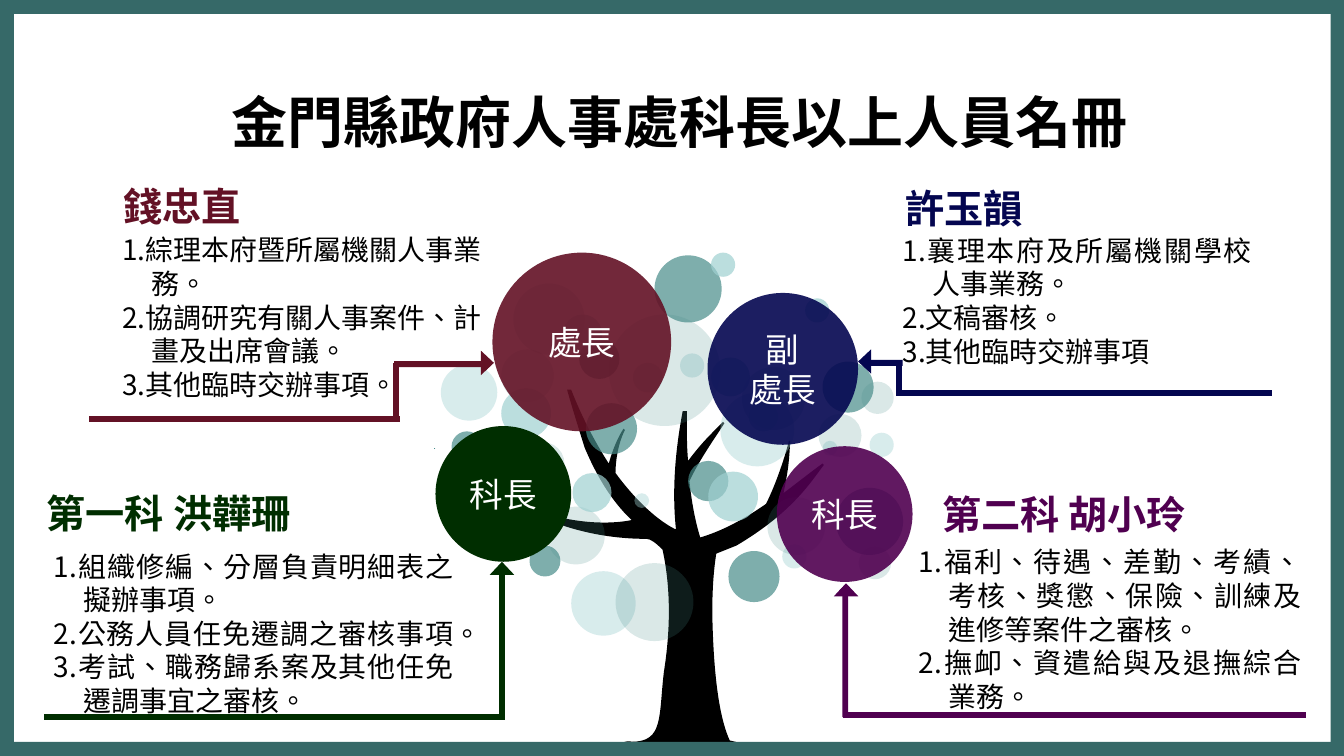
from dataclasses import dataclass
from typing import Optional

from lxml import etree
from pptx import Presentation
from pptx.dml.color import RGBColor
from pptx.enum import shapes, text
from pptx.oxml.ns import qn
from pptx.util import Inches, Pt

COLUMNS, ROWS = 100, 56.25
CELL = Inches(0.1)
FONT = "Noto Sans CJK SC"
BLACK = RGBColor(0x00, 0x00, 0x00)
WHITE = RGBColor(0xFF, 0xFF, 0xFF)
FRAME = RGBColor(0x36, 0x69, 0x68)
TEAL = RGBColor(0x48, 0x8C, 0x8A)
AQUA = RGBColor(0x9F, 0xD0, 0xD1)
WINE = RGBColor(0x63, 0x11, 0x25)
NAVY = RGBColor(0x04, 0x06, 0x50)
GREEN = RGBColor(0x00, 0x2E, 0x00)
PURPLE = RGBColor(0x50, 0x00, 0x50)
KIND = shapes.MSO_SHAPE


@dataclass(frozen=True)
class Box:
    left: float
    top: float
    width: float
    height: float

    def lengths(self) -> list[int]:
        return [cells(n) for n in (self.left, self.top, self.width, self.height)]


@dataclass(frozen=True)
class Foliage:
    color: RGBColor
    opacity: int
    spots: tuple


@dataclass(frozen=True)
class Role:
    lines: tuple
    box: Box
    color: RGBColor
    opacity: int


@dataclass(frozen=True)
class Member:
    name: str
    name_box: Box
    color: RGBColor
    duties: tuple
    duty_box: Box
    margin: float = 2.2


@dataclass(frozen=True)
class Piece:
    kind: int
    box: Box
    color: RGBColor
    rotation: int = 0


TREE_START = (49.3, 40.9)
TREE_STEPS = (
    (49.8, 43.2, 50, 46.2, 49.4, 50), (49, 53.3, 49.4, 55.2, 47, 55.2),
    (47, 55.2, 46.5, 55, 45.8, 55.6), (55.9, 55.6),
    (55.4, 55.4, 54.8, 55.2, 54.3, 55.1), (53.7, 53.8, 53.1, 51.2, 53, 45.6),
    (53, 43.9, 53.1, 42.4, 53.3, 41.2), (54.8, 40.6),
    (59, 38.1, 60.3, 35.9, 61.3, 34.6), (61.2, 34.5),
    (60.1, 35.3, 59.1, 36.1, 58.3, 36.7), (58.6, 35.2, 58.7, 34.7, 58.8, 32.8),
    (58.7, 32.8), (58.5, 33.7, 57.8, 35.9, 57, 37.5),
    (54.7, 39.1, 53.1, 39.7, 52.1, 40), (51.8, 39, 51.5, 37.7, 51.3, 35.8),
    (52.1, 34.1, 53.4, 32.3, 53.9, 31.5), (53.8, 31.4),
    (52.5, 32.7, 52.1, 33.1, 51.2, 34.3), (51.1, 33.3, 51.1, 32, 51.1, 30.6),
    (50.8, 30.6), (50.5, 32.2, 49.9, 35.7, 50.3, 39.4),
    (50.3, 39.4, 48.3, 38.6, 45.8, 35.2), (45.8, 34.6, 45.9, 33.2, 46.5, 32),
    (46.4, 31.9), (46, 32.5, 45.6, 33.4, 45.3, 34.5),
    (44.4, 33.1, 43.4, 31.3, 42.5, 29), (42.2, 29),
    (42.4, 29.8, 43.5, 33.3, 43.5, 33.3), (44.3, 35.2, 45.4, 37.2, 47, 38.7),
    (47, 38.7, 44.2, 39.4, 40.2, 38.1), (40.1, 38.4),
    (41.8, 39.2, 44.6, 40.1, 48.1, 40.1), (48.4, 40.1, 48.8, 40.4, 49.3, 40.9),
)

FOLIAGE = (
    Foliage(TEAL, 70, (
        (33.6, 32.1, 2.3), (39.4, 40.6, 2.3), (43.1, 25.2, 3), (51.2, 34.3, 3),
        (43.6, 30, 3.8), (54.2, 41, 3.8), (61.2, 26.9, 3.8), (62.2, 36.3, 5),
        (48.7, 19, 5))),
    Foliage(AQUA, 40, (
        (32.8, 27.1, 4.2), (53.6, 29.2, 5.5), (42.5, 42.5, 4.8), (58.2, 40.5, 1.8),
        (64.7, 32.2, 1.8), (37.2, 33.4, 1.8), (50.6, 26.3, 1.8), (38.2, 21.1, 5.3),
        (47.2, 36.7, 1.1), (61.2, 32.8, 1.1))),
    Foliage(TEAL, 20, (
        (45.3, 23.4, 8.3), (55.2, 27.3, 4.7), (40.7, 37.7, 4.3), (57.1, 37, 4.3),
        (37.3, 26, 3.9), (38.8, 32.9, 3.2), (60.9, 30.8, 3.2), (64.1, 28.4, 2.4),
        (63.9, 40.7, 2.4), (45.8, 41.9, 5.8))),
    Foliage(AQUA, 70, (
        (59.9, 22.2, 1.8), (52.9, 18.8, 1.8), (55.7, 29.9, 2.2), (47.1, 27, 2.2),
        (52.9, 26.6, 2.9), (41.9, 23.4, 2.9), (42.6, 35.2, 2.9), (37.3, 28.9, 3.7),
        (52.7, 35.1, 3.7))),
)

ROLES = (
    Role(("處長",), Box(36.64, 18.8, 13.3, 13.3), WINE, 90),
    Role(("副", "處長"), Box(52.64, 21.8, 11.2, 11.3), NAVY, 90),
    Role(("科長",), Box(32.4, 31.7, 10.1, 10.1), GREEN, 100),
    Role(("科長",), Box(57.8, 33.2, 10.1, 10.1), PURPLE, 90),
)

LEFT_MEMBERS = (
    Member("錢忠直", Box(9.2, 13.6, 11.4, 3.9), WINE,
           ("1.綜理本府暨所屬機關人事業務。", "2.協調研究有關人事案件、計畫及出席會議。",
            "3.其他臨時交辦事項。"), Box(9.1, 17.34, 26.74, 12.6)),
    Member("第一科 洪韡珊", Box(3.46, 36.4, 31.8, 5.8), GREEN,
           ("1.組織修編、分層負責明細表之擬辦事項。", "2.公務人員任免遷調之審核事項。",
            "3.考試、職務歸系案及其他任免遷調事宜之審核。"), Box(4, 40.86, 29.8, 11.4)),
)
RIGHT_MEMBERS = (
    Member("許玉韻", Box(67.36, 13.7, 21.1, 5.7), NAVY,
           ("1.襄理本府及所屬機關學校人事業務。", "2.文稿審核。", "3.其他臨時交辦事項"),
           Box(66.46, 17.36, 26.7, 12.7), 2.9),
    Member("第二科 胡小玲", Box(70.1, 36.5, 26.7, 5.7), PURPLE,
           ("1.福利、待遇、差勤、考績、考核、獎懲、保險、訓練及進修等案件之審核。",
            "2.撫卹、資遣給與及退撫綜合業務。"), Box(68.36, 40.54, 28.5, 12.1)),
)

BORDERS = (Box(0, 0, COLUMNS, 1.04), Box(0, 0, 1.04, ROWS),
           Box(0, ROWS - 1.04, COLUMNS - 0.8, 1.04), Box(COLUMNS - 1, 0, 1, ROWS))

POINTERS = (
    Piece(KIND.RECTANGLE, Box(6.7, 31.06, 23, 0.3), WINE),
    Piece(KIND.RECTANGLE, Box(27.44, 29, 4.1, 0.3), WINE, 270),
    Piece(KIND.RECTANGLE, Box(3.36, 53.2, 34, 0.3), GREEN),
    Piece(KIND.RECTANGLE, Box(62.8, 53.06, 34.3, 0.3), PURPLE),
    Piece(KIND.RECTANGLE, Box(66.76, 29.1, 27.8, 0.3), NAVY),
    Piece(KIND.RECTANGLE, Box(65.7, 27.9, 2.4, 0.3), NAVY, 270),
    Piece(KIND.RIGHT_ARROW, Box(29.4, 26.8, 7.1, 0.6), WINE),
    Piece(KIND.UP_ARROW, Box(37.06, 42, 0.6, 11.5), GREEN),
    Piece(KIND.UP_ARROW, Box(62.6, 43.6, 0.6, 9.7), PURPLE),
    Piece(KIND.LEFT_ARROW, Box(64.1, 26.7, 3, 0.6), NAVY),
    Piece(KIND.ISOSCELES_TRIANGLE, Box(35.5, 26.6, 1.5, 0.8), WINE, 90),
    Piece(KIND.ISOSCELES_TRIANGLE, Box(36.6, 41.9, 1.5, 0.8), GREEN),
    Piece(KIND.ISOSCELES_TRIANGLE, Box(62.2, 43.5, 1.5, 0.8), PURPLE),
    Piece(KIND.ISOSCELES_TRIANGLE, Box(63.6, 26.5, 1.5, 0.8), NAVY, 270),
)


def cells(count: float) -> int:
    return round(count * CELL)


def paint(shape, color: RGBColor, opacity: int = 100, outline: Optional[RGBColor] = None) -> None:
    shape.shadow.inherit = False
    shape.fill.solid()
    shape.fill.fore_color.rgb = color
    if opacity < 100:
        tint = shape.fill._xPr.find(".//" + qn("a:srgbClr"))
        etree.SubElement(tint, qn("a:alpha")).set("val", str(opacity * 1000))
    if outline is None:
        shape.line.fill.background()
    else:
        shape.line.color.rgb = outline
        shape.line.width = Pt(1)
        corner = etree.SubElement(shape.line._get_or_add_ln(), qn("a:miter"))
        corner.set("lim", "800000")


def draw_shape(parent, kind: int, box: Box, color: RGBColor, opacity: int = 100,
               outline: Optional[RGBColor] = None):
    shape = parent.add_shape(kind, *box.lengths())
    paint(shape, color, opacity, outline)
    return shape


def write(frame, lines: tuple, size: int, color: RGBColor, bold: bool = False,
          align=text.PP_ALIGN.LEFT, margin: float = 0, inset: float = 0) -> None:
    frame.margin_left = frame.margin_right = cells(inset)
    frame.margin_top = frame.margin_bottom = cells(inset / 2)
    for index, line in enumerate(lines):
        paragraph = frame.add_paragraph() if index else frame.paragraphs[0]
        paragraph.alignment = align
        if margin:
            properties = paragraph._p.get_or_add_pPr()
            properties.set("marL", str(cells(margin)))
            properties.set("indent", str(cells(-2.2)))
        run = paragraph.add_run()
        run.text = line
        run.font.size, run.font.bold, run.font.name = Pt(size), bold, FONT
        run.font.color.rgb = color
        letters = run._r.get_or_add_rPr()
        letters.set("lang", "zh-TW")
        etree.SubElement(letters, qn("a:ea")).set("typeface", FONT)


def draw_tree(parent) -> None:
    builder = parent.build_freeform(*map(cells, TREE_START))
    builder.add_line_segments([tuple(map(cells, step[-2:])) for step in TREE_STEPS], close=True)
    trunk = builder.convert_to_shape()
    paint(trunk, BLACK)
    segments = list(trunk._element.iter(qn("a:lnTo")))
    for segment, step in zip(segments, TREE_STEPS):
        if len(step) == 6:
            curve = etree.Element(qn("a:cubicBezTo"))
            for x, y in zip(step[::2], step[1::2]):
                point = etree.SubElement(curve, qn("a:pt"))
                point.set("x", str(cells(x) - trunk.left))
                point.set("y", str(cells(y) - trunk.top))
            segment.getparent().replace(segment, curve)


def draw_role(parent, role: Role) -> None:
    circle = draw_shape(parent, KIND.OVAL, role.box, role.color, role.opacity)
    circle.text_frame.vertical_anchor = text.MSO_ANCHOR.MIDDLE
    write(circle.text_frame, role.lines, 18, WHITE, align=text.PP_ALIGN.CENTER)


def draw_member(parent, member: Member) -> None:
    duties = parent.add_textbox(*member.duty_box.lengths()).text_frame
    duties.word_wrap = True
    write(duties, member.duties, 15, BLACK, align=text.PP_ALIGN.JUSTIFY, margin=member.margin)
    heading = parent.add_textbox(*member.name_box.lengths()).text_frame
    heading.word_wrap = False
    write(heading, (member.name,), 21, member.color, bold=True)


def main() -> None:
    deck = Presentation()
    deck.slide_width, deck.slide_height = cells(COLUMNS), cells(ROWS)
    canvas = deck.slides.add_slide(deck.slide_layouts[6]).shapes
    tree = canvas.add_group_shape().shapes
    draw_tree(tree)
    for foliage in FOLIAGE:
        for left, top, size in foliage.spots:
            draw_shape(tree, KIND.OVAL, Box(left, top, size, size), foliage.color, foliage.opacity)
    for role in ROLES:
        draw_role(tree, role)
    for members in (LEFT_MEMBERS, RIGHT_MEMBERS):
        side = canvas.add_group_shape().shapes
        for member in members:
            draw_member(side, member)
    title = canvas.add_textbox(*Box(16.26, 6, 69.3, 6.1).lengths()).text_frame
    title.word_wrap = False
    title.auto_size = text.MSO_AUTO_SIZE.SHAPE_TO_FIT_TEXT
    write(title, ("金門縣政府人事處科長以上人員名冊",), 30, BLACK, bold=True, inset=1)
    for border in BORDERS:
        draw_shape(canvas, KIND.RECTANGLE, border, FRAME)
    dash = canvas.add_connector(shapes.MSO_CONNECTOR.STRAIGHT, *map(cells, (32.4, 33.4, 32.3, 33.4)))
    dash.line.color.rgb, dash.line.width = TEAL, Pt(0.5)
    etree.SubElement(dash._element.spPr, qn("a:effectLst"))
    for piece in POINTERS:
        draw_shape(canvas, piece.kind, piece.box, piece.color, outline=piece.color).rotation = piece.rotation
    deck.save("out.pptx")


if __name__ == "__main__":
    main()
